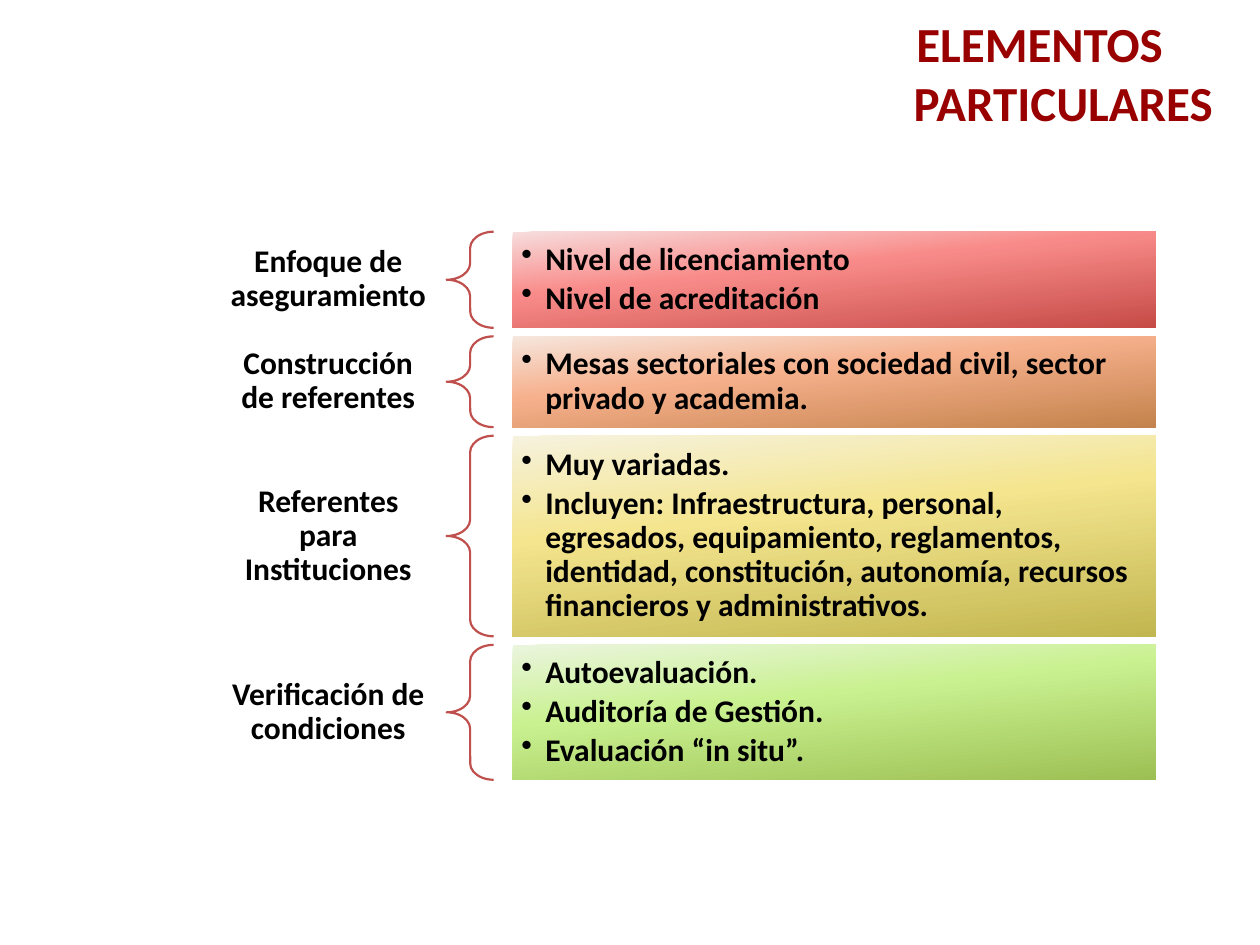
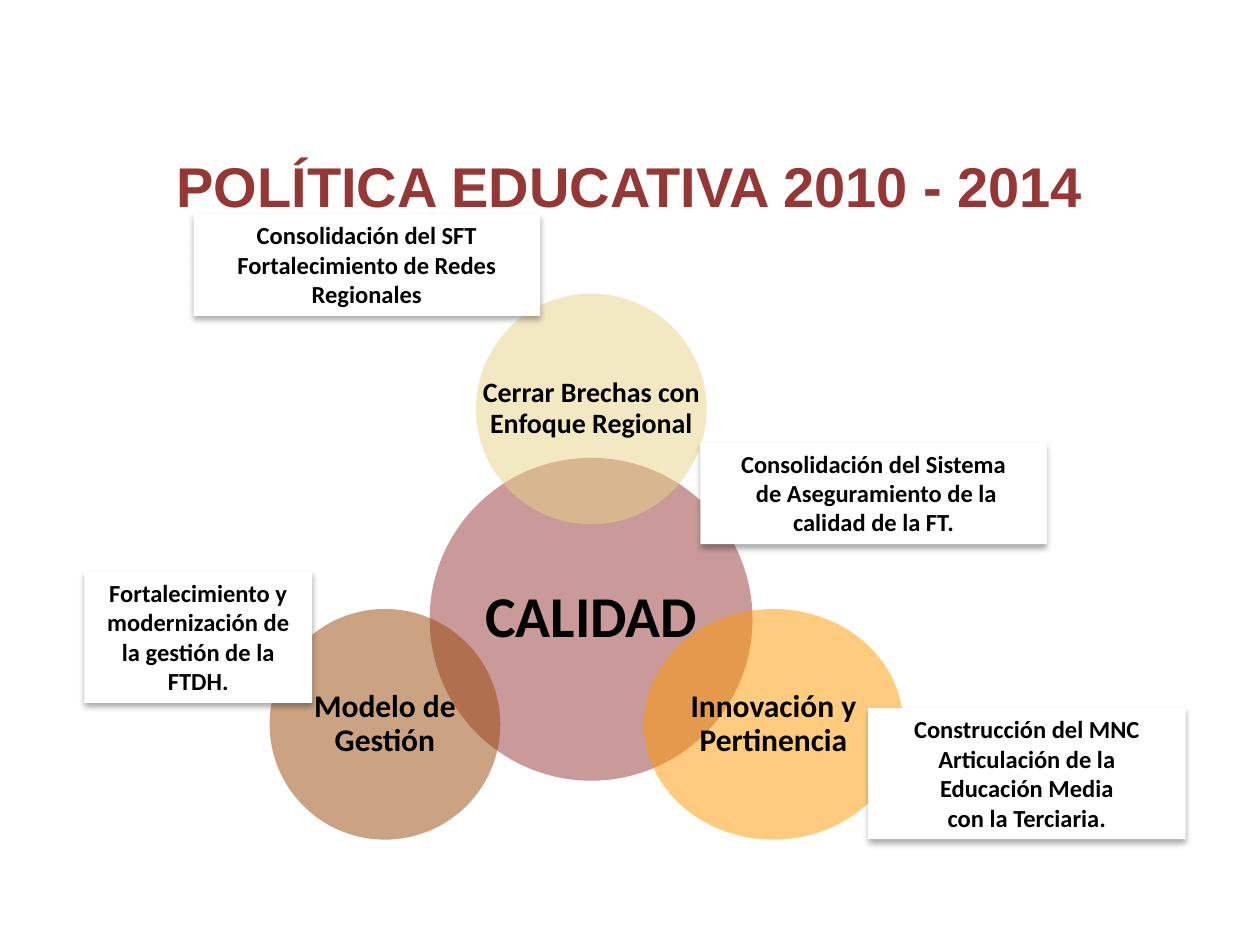
from copy import deepcopy

from pptx import Presentation
from pptx.dml.color import RGBColor
from pptx.enum.shapes import MSO_SHAPE
from pptx.enum.text import MSO_ANCHOR, PP_ALIGN
from pptx.oxml.ns import qn
from pptx.util import Pt
from lxml import etree

RECTANGLE, ELLIPSE, BRACE = MSO_SHAPE.RECTANGLE, MSO_SHAPE.OVAL, MSO_SHAPE.LEFT_BRACE
LEFT, CENTER = PP_ALIGN.LEFT, PP_ALIGN.CENTER
TOP, MIDDLE = MSO_ANCHOR.TOP, MSO_ANCHOR.MIDDLE

COLORS = {
    "text": "000000", "white": "FFFFFF", "heading": "990000", "wine": "953735",
    "brace": "C0504D", "sand": "E7D287", "orange": "FF9900", "brown": "984807",
}


def write(shape, text, size=18, color="text", font="Calibri", align=CENTER, anchor=MIDDLE,
          inset=(7.2, 3.6), spacing=1.0, after=0, hanging=0, bullet=False):
    """Fill a shape with bold text, one paragraph per line."""
    frame = shape.text_frame
    frame.word_wrap = True
    frame.vertical_anchor = anchor
    frame.margin_left = frame.margin_right = Pt(inset[0])
    frame.margin_top = frame.margin_bottom = Pt(inset[1])
    frame.text = text
    for paragraph in frame.paragraphs:
        properties = paragraph._p.get_or_add_pPr()
        if hanging:
            properties.set("marL", str(Pt(hanging)))
            properties.set("indent", str(-Pt(hanging)))
        if bullet:
            etree.SubElement(properties, qn("a:buChar"), char="•")
        paragraph.alignment = align
        paragraph.line_spacing = spacing
        paragraph.space_after = Pt(after)
        for run in paragraph.runs:
            run.font.size = Pt(size)
            run.font.name = font
            run.font.bold = True
            run.font.color.rgb = RGBColor.from_string(COLORS[color])


def add_plain(slide, kind, left, top, width, height, fill=None):
    """Add a shape without line or shadow."""
    shape = slide.shapes.add_shape(kind, Pt(left), Pt(top), Pt(width), Pt(height))
    shape.shadow.inherit = False
    shape.line.fill.background()
    if fill:
        shape.fill.solid()
        shape.fill.fore_color.rgb = RGBColor.from_string(COLORS[fill])
    else:
        shape.fill.background()
    return shape


prs = Presentation()
prs.slide_width, prs.slide_height = Pt(720), Pt(540)
blank = prs.slide_layouts[6]

# Slide 1: particular elements
elements = prs.slides.add_slide(blank)
heading = elements.shapes.add_textbox(Pt(466.6), Pt(4.3), Pt(254.9), Pt(51))
write(heading, "ELEMENTOS PARTICULARES", size=28, color="heading", anchor=TOP, hanging=27)

# Label, label height, row height, gradient colours, bullet points
ROWS = [
    ("Enfoque de aseguramiento", 47.5, 54.9, ("F7DDDD", "F88B89", "C64B47"),
     "Nivel de licenciamiento\nNivel de acreditación"),
    ("Construcción de referentes", 47.5, 51.9, ("F6E6DD", "F6B08C", "C4834C"),
     "Mesas sectoriales con sociedad civil, sector privado y academia."),
    ("Referentes para Instituciones", 67, 114.6, ("F6F2DE", "F4E58E", "C2B650"),
     "Muy variadas.\nIncluyen: Infraestructura, personal, egresados, equipamiento, reglamentos, "
     "identidad, constitución, autonomía, recursos financieros y administrativos."),
    ("Verificación de condiciones", 47.5, 77.1, ("EBF5DE", "C9F190", "9DC054"),
     "Autoevaluación.\nAuditoría de Gestión.\nEvaluación “in situ”."),
]
ROW_GAP = 4.9
row_top = 132.4
for label_text, label_height, row_height, shades, points in ROWS:
    label_top = row_top + (row_height - label_height) / 2
    label = elements.shapes.add_textbox(Pt(120.3), Pt(label_top), Pt(134.6), Pt(label_height))
    write(label, label_text, inset=(10.08, 3.6), spacing=0.9)

    brace = add_plain(elements, BRACE, 255.2, row_top, 26.9, row_height)
    brace.adjustments[0] = 0.35
    brace.line.color.rgb = RGBColor.from_string(COLORS["brace"])
    brace.line.width = Pt(1.25)

    panel = add_plain(elements, RECTANGLE, 293, row_top, 367.4, row_height)
    panel.fill.gradient()
    panel.fill.gradient_angle = 360 - 84
    stops = panel._element.spPr.find(".//" + qn("a:gsLst"))
    stops.append(deepcopy(stops[0]))
    for stop, position, shade in zip(panel.fill.gradient_stops, (0, 0.4, 1), shades):
        stop.position = position
        stop.color.rgb = RGBColor.from_string(shade)
    write(panel, points, align=LEFT, inset=(5, 5), spacing=0.9, after=2.8,
          hanging=13.6, bullet=True)
    row_top += row_height + ROW_GAP

# Slide 2: education policy
policy = prs.slides.add_slide(blank)
title = policy.shapes.add_textbox(Pt(36), Pt(60.5), Pt(648), Pt(90))
write(title, "POLÍTICA EDUCATIVA 2010 - 2014", size=32, color="wine", font="Arial")

# Overlapping circles: text, size, colour, inset, left, top, width, height
CIRCLES = [
    ("CALIDAD", 33, "wine", 3.6, 245.5, 261.6, 184.5, 184.5),
    ("Cerrar Brechas con Enfoque Regional", 16, "sand", 1.4, 272, 167.8, 131.8, 131.8),
    ("Innovación y Pertinencia", 18, "orange", 2.2, 367.9, 348, 148.2, 131.8),
    ("Modelo de Gestión", 18, "brown", 2.2, 154.1, 348, 131.8, 131.8),
]
for theme, size, color, margin, *box in CIRCLES:
    circle = add_plain(policy, ELLIPSE, *box, fill=color)
    tint = circle._element.spPr.find(qn("a:solidFill"))[0]
    etree.SubElement(tint, qn("a:alpha"), val="50000")
    caption = policy.shapes.add_textbox(*[Pt(length) for length in box])
    write(caption, theme, size=size, inset=(margin, margin), spacing=0.9)

# Callouts with a soft shadow: text, left, top, width, height
CALLOUTS = [
    ("Consolidación del Sistema\n de Aseguramiento de la calidad de la FT.",
     400.2, 252.8, 198, 58.2),
    ("Fortalecimiento y modernización de la gestión de la FTDH.", 48.2, 326.8, 130.2, 74.9),
    ("Construcción del MNC\nArticulación de la\nEducación Media\ncon la Terciaria.",
     496.1, 404.7, 181.4, 74.9),
    ("Consolidación del SFT\nFortalecimiento de Redes Regionales", 110.6, 122.4, 198, 58.2),
]
for action, *box in CALLOUTS:
    callout = add_plain(policy, RECTANGLE, *box, fill="white")
    effects = callout._element.spPr.find(qn("a:effectLst"))
    shadow = etree.SubElement(effects, qn("a:outerShdw"), blurRad=str(Pt(3.5)),
                              dist=str(Pt(2.2)), dir="5400000", rotWithShape="0")
    shadow_color = etree.SubElement(shadow, qn("a:srgbClr"), val=COLORS["text"])
    etree.SubElement(shadow_color, qn("a:alpha"), val="32000")
    write(callout, action, size=14, anchor=TOP)

prs.save("out.pptx")
